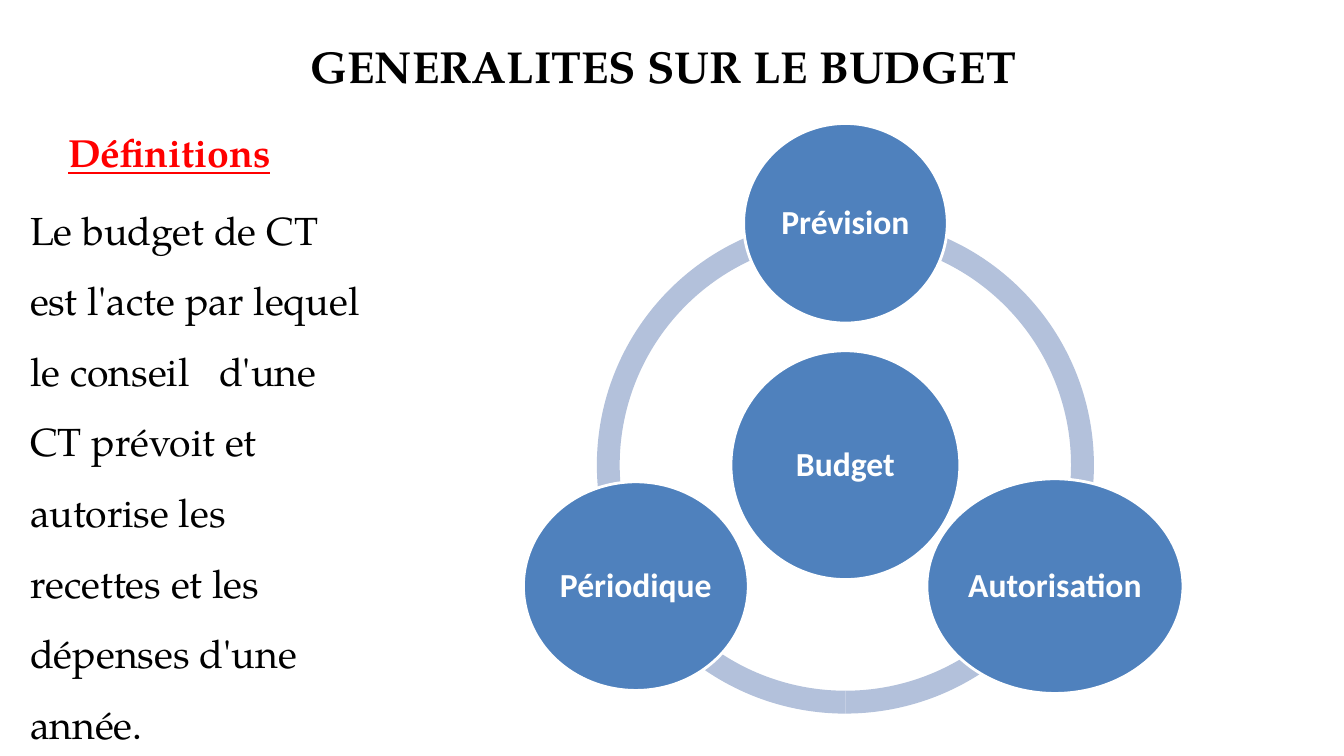
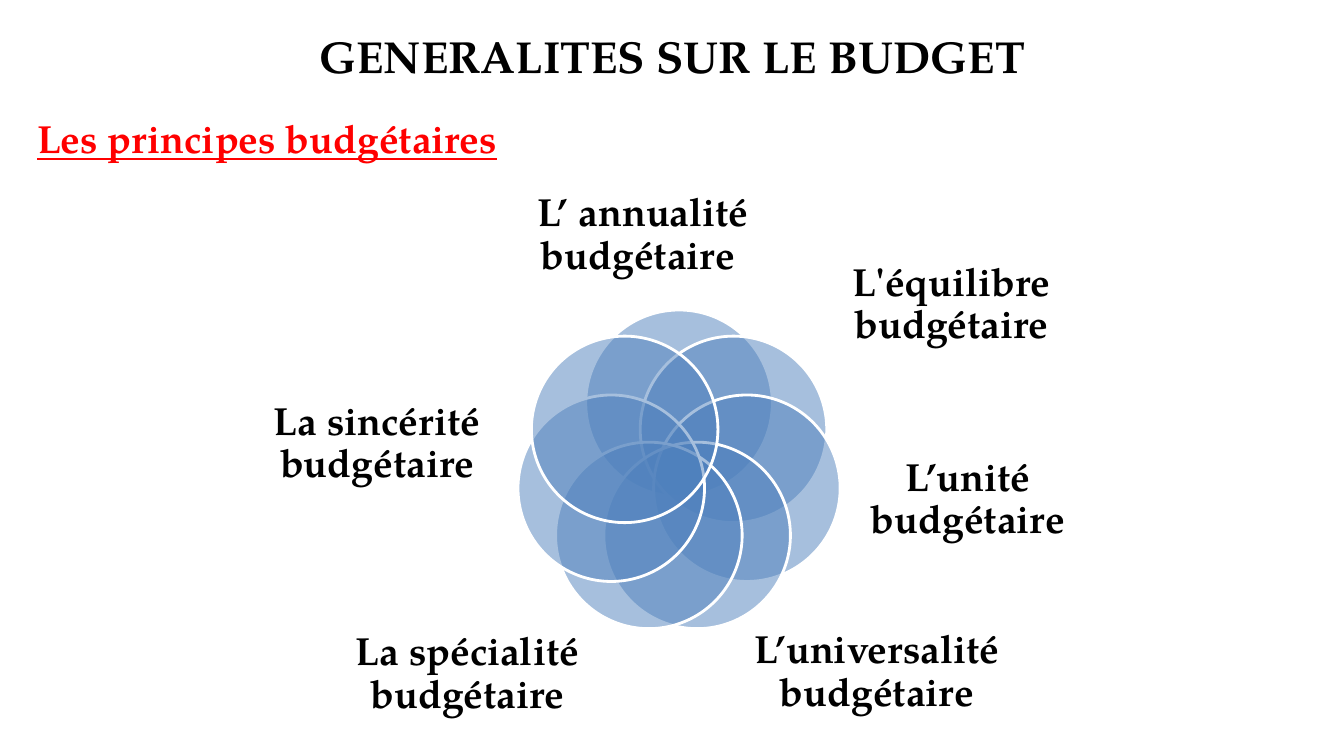
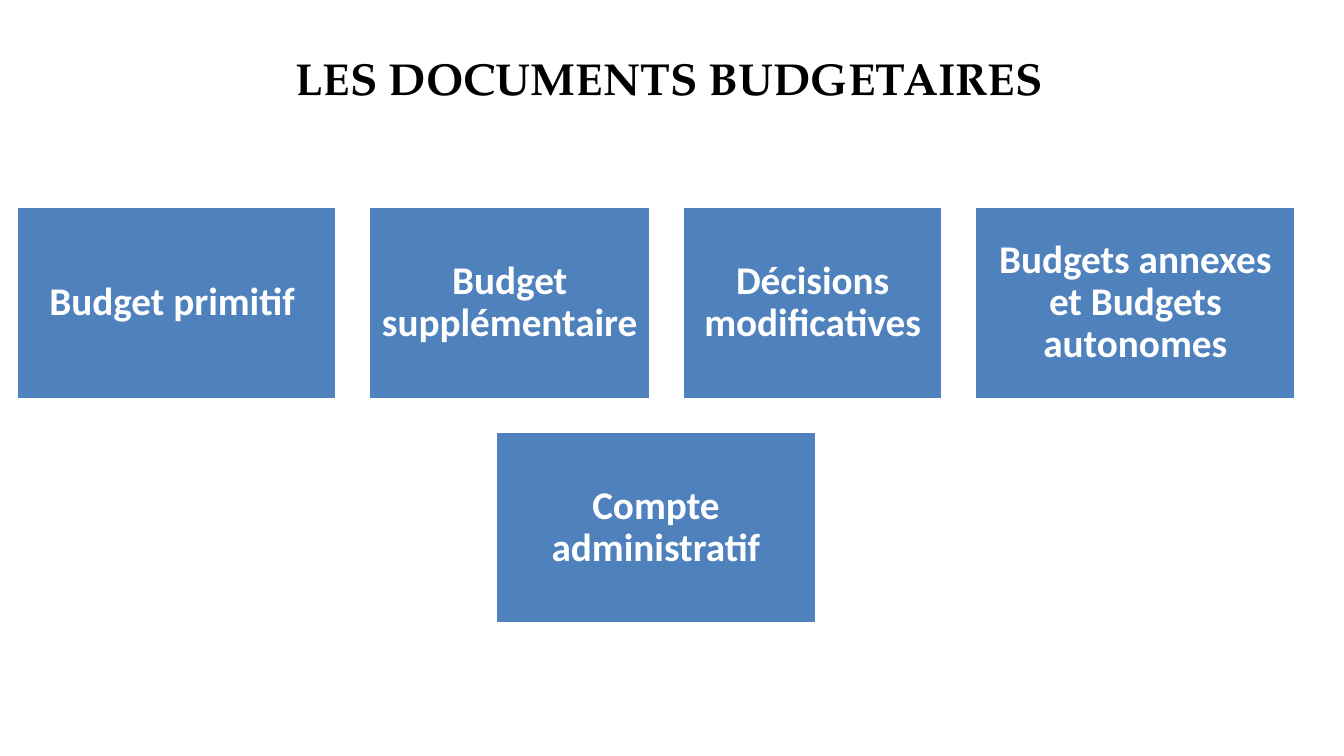
from math import cos, radians, sin

from lxml.etree import SubElement
from pptx import Presentation
from pptx.dml.color import RGBColor
from pptx.enum.shapes import MSO_SHAPE
from pptx.enum.text import MSO_ANCHOR, PP_ALIGN
from pptx.oxml.ns import qn
from pptx.util import Inches, Pt

# Shared style
SERIF, SANS = "TeX Gyre Pagella", "Calibri"
BLUE, PALE, RED, BLACK, WHITE = "4F81BD", "B3C1DB", "FF0000", "000000", "FFFFFF"

# Slide 1: definition and ring diagram
BUDGET_TITLE = "GENERALITES SUR LE BUDGET"
DEFINITION = ("Le budget de CT est l'acte par lequel le conseil   d'une CT prévoit "
              "et autorise les recettes et les dépenses d'une année.")
RING_CENTRE, RING_SIZE, RING_WIDTH, ORBIT = (8.385, 4.615), 4.93, 0.046, 2.4
RING_ARCS = [(90, 162), (18, 90), (162, 18)]
HUB = ("Budget", 2.27)
NODES = [  # text, width, height
    ("Prévision", 2.02, 1.98),
    ("Autorisation", 2.54, 2.13),
    ("Périodique", 2.23, 2.07),
]

# Slide 2: overlapping petals, clockwise from the top
PETAL_CENTRE, PETAL_SIZE, PETAL_ORBIT = (6.735, 4.69), 1.85, 0.69
PETALS = [  # text, text box, sideways nudge of the petal
    ("L’ annualité budgétaire ", (5.1, 1.77, 2.55, 1.13), 0),
    ("L'équilibre budgétaire", (8.2, 2.29, 2.47, 1.47), 0),
    ("L’unité budgétaire", (8.08, 4.03, 3.04, 1.86), 0),
    ("L’universalité budgétaire", (7.2, 5.89, 2.99, 1.56), -0.12),
    ("La spécialité budgétaire", (3.43, 6.08, 2.41, 1.22), 0),
    ("La sincérité budgétaire", (2.27, 3.72, 2.94, 1.36), 0),
    (None, None, 0),
]

# Slide 3: centred rows of boxes (text, width)
DOCUMENT_ROWS = [
    [("Budget primitif ", 3.18), ("Budget supplémentaire", 2.79),
     ("Décisions modificatives", 2.58), ("Budgets annexes et Budgets autonomes", 3.18)],
    [("Compte administratif", 3.18)],
]
ROWS_MIDDLE, ROWS_TOP, BOX_HEIGHT, BOX_GAP = 6.505, 2.05, 1.91, 0.32


def rgb(colour):
    return RGBColor.from_string(colour)


def write(s, text, size, font, colour, bold=True, underline=False,
          align=PP_ALIGN.CENTER, anchor=MSO_ANCHOR.MIDDLE, inset=None,
          spacing=None, around=None):
    tf = s.text_frame
    tf.word_wrap = True
    tf.vertical_anchor = anchor
    if inset is not None:
        tf.margin_left = tf.margin_right = Inches(inset)
        tf.margin_top = tf.margin_bottom = Inches(inset)
    tf.text = text
    p = tf.paragraphs[0]
    p.alignment = align
    p.line_spacing = spacing
    if around:
        p.space_before = p.space_after = Pt(around)
    f = p.runs[0].font
    f.size, f.name, f.bold, f.underline = Pt(size), font, bold, underline
    f.color.rgb = rgb(colour)


def textbox(slide, box, *args, **style):
    write(slide.shapes.add_textbox(*map(Inches, box)), *args, **style)


def title(slide, text, box):
    textbox(slide, box, text, 32, SERIF, BLACK)


def shape(slide, kind, box, fill=BLUE, outlined=True, alpha=None):
    s = slide.shapes.add_shape(kind, *map(Inches, box))
    s.shadow.inherit = False
    s.fill.solid()
    s.fill.fore_color.rgb = rgb(fill)
    if alpha:
        colour = s.fill._xPr.find(qn("a:solidFill"))[0]
        SubElement(colour, qn("a:alpha")).set("val", str(alpha * 1000))
    if outlined:
        s.line.color.rgb = rgb(WHITE)
        s.line.width = Pt(2)
    else:
        s.line.fill.background()
    return s


def centred(centre, width, height):
    return centre[0] - width / 2, centre[1] - height / 2, width, height


def around_centre(centre, radius, index, count):
    """Point number index of count, clockwise from the top."""
    angle = radians(360 * index / count)
    return centre[0] + radius * sin(angle), centre[1] - radius * cos(angle)


def definition_slide(slide):
    title(slide, BUDGET_TITLE, (0.58, 0.12, 12, 1.07))
    textbox(slide, (0.58, 1.22, 4, 0.7), "Définitions", 28, SERIF, RED, underline=True,
            align=PP_ALIGN.LEFT, anchor=MSO_ANCHOR.TOP, around=12)
    # Ring
    for start, end in RING_ARCS:
        arc = shape(slide, MSO_SHAPE.BLOCK_ARC, centred(RING_CENTRE, RING_SIZE, RING_SIZE),
                    PALE, outlined=False)
        # Angles are stored in 60000ths of a degree, adjustments in 100000ths
        for i, value in enumerate((start * 0.6, end * 0.6, RING_WIDTH)):
            arc.adjustments[i] = value
    # Hub and nodes
    discs = [(HUB[0], RING_CENTRE, HUB[1], HUB[1])]
    for i, (text, width, height) in enumerate(NODES):
        discs.append((text, around_centre(RING_CENTRE, ORBIT, i, len(NODES)), width, height))
    for text, centre, width, height in discs:
        disc = shape(slide, MSO_SHAPE.OVAL, centred(centre, width, height))
        write(disc, text, 24, SANS, WHITE, inset=0.03, spacing=0.9)
    textbox(slide, (0.2, 1.76, 3.52, 5.76), DEFINITION, 28, SERIF, BLACK, bold=False,
            align=PP_ALIGN.LEFT, anchor=MSO_ANCHOR.TOP, spacing=1.5, around=12)


def principles_slide(slide):
    textbox(slide, (0.27, 1.03, 5.06, 0.67), "Les principes budgétaires", 28, SERIF, RED,
            underline=True, align=PP_ALIGN.LEFT)
    for i, (text, box, nudge) in enumerate(PETALS):
        x, y = around_centre(PETAL_CENTRE, PETAL_ORBIT, i, len(PETALS))
        shape(slide, MSO_SHAPE.OVAL, centred((x + nudge, y), PETAL_SIZE, PETAL_SIZE), alpha=50)
        if text:
            textbox(slide, box, text, 28, SERIF, BLACK, inset=0, spacing=0.9)
    title(slide, BUDGET_TITLE, (0.67, 0.02, 12, 1.07))


def documents_slide(slide):
    title(slide, "LES DOCUMENTS BUDGETAIRES", (1.94, 0.4, 9.4, 0.73))
    for i, row in enumerate(DOCUMENT_ROWS):
        row_width = sum(width for _, width in row) + BOX_GAP * (len(row) - 1)
        x = ROWS_MIDDLE - row_width / 2
        y = ROWS_TOP + i * (BOX_HEIGHT + BOX_GAP)
        for text, width in row:
            box = shape(slide, MSO_SHAPE.RECTANGLE, (x, y, width, BOX_HEIGHT))
            write(box, text, 28, SANS, WHITE, inset=0.12, spacing=0.9)
            x += width + BOX_GAP


def main():
    prs = Presentation()
    prs.slide_width, prs.slide_height = Inches(13.33), Inches(7.5)
    for build in (definition_slide, principles_slide, documents_slide):
        build(prs.slides.add_slide(prs.slide_layouts[6]))
    prs.save("out.pptx")


if __name__ == "__main__":
    main()
